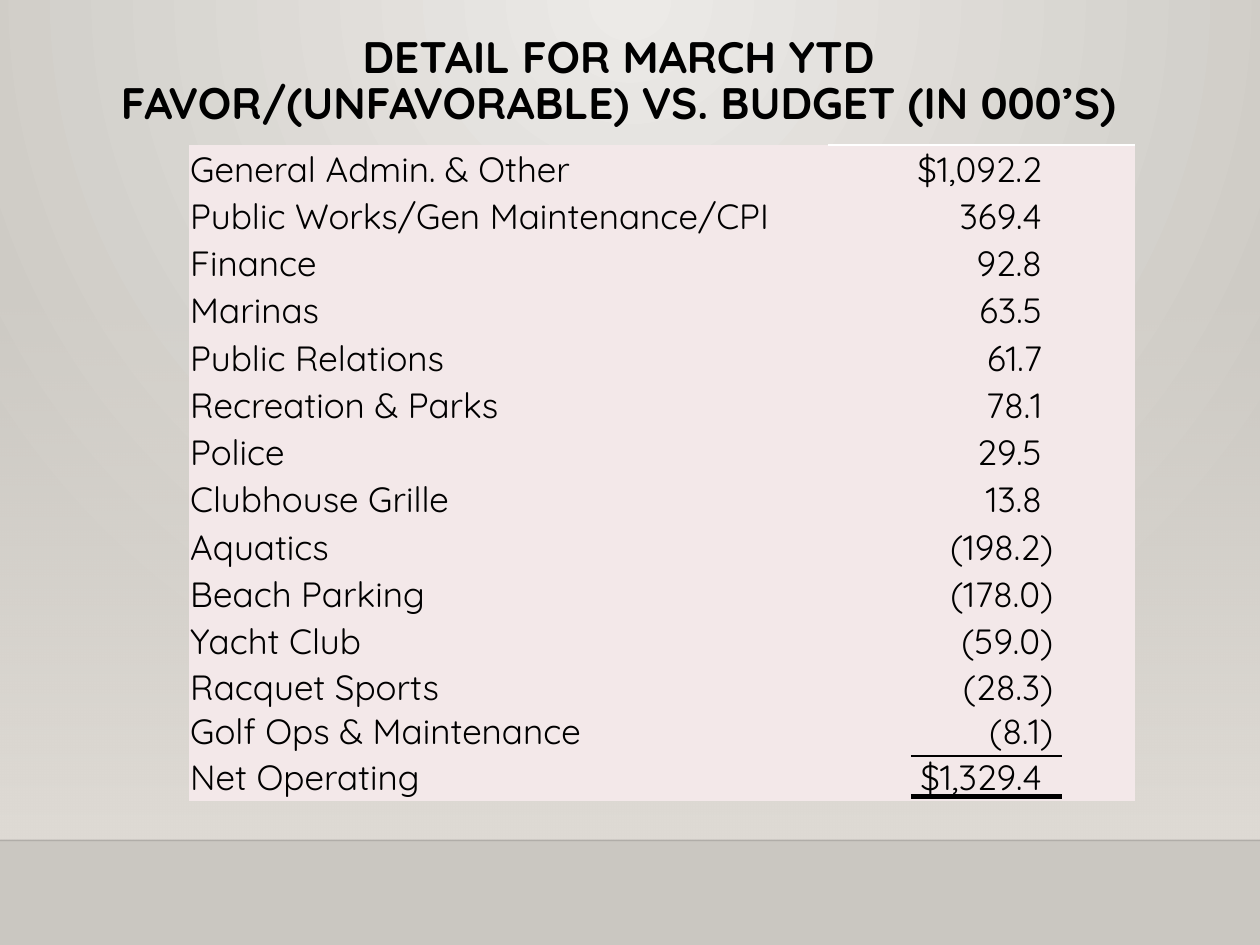
"""Build the March year-to-date budget variance slide."""
from lxml import etree
from pptx import Presentation
from pptx.dml.color import RGBColor
from pptx.enum.shapes import MSO_CONNECTOR, MSO_SHAPE
from pptx.enum.text import MSO_ANCHOR, MSO_AUTO_SIZE, PP_ALIGN
from pptx.oxml import parse_xml
from pptx.oxml.ns import nsdecls, qn
from pptx.util import Inches, Pt

STRAIGHT, RECTANGLE = MSO_CONNECTOR.STRAIGHT, MSO_SHAPE.RECTANGLE
TOP, MIDDLE = MSO_ANCHOR.TOP, MSO_ANCHOR.MIDDLE
LEFT, CENTER, RIGHT = PP_ALIGN.LEFT, PP_ALIGN.CENTER, PP_ALIGN.RIGHT
NO_AUTOFIT = MSO_AUTO_SIZE.NONE

TITLE = "DETAIL FOR MARCH YTD\vFAVOR/(UNFAVORABLE) VS. BUDGET (IN 000’S)"
DEPARTMENTS = [
    ("General Admin. & Other", "$1,092.2"),
    ("Public Works/Gen Maintenance/CPI", "369.4"),
    ("Finance", "92.8"),
    ("Marinas", "63.5"),
    ("Public Relations", "61.7"),
    ("Recreation & Parks", "78.1"),
    ("Police", "29.5"),
    ("Clubhouse Grille", "13.8"),
    ("Aquatics", "(198.2)"),
    ("Beach Parking", "(178.0)"),
    ("Yacht Club", "(59.0)"),
    ("Racquet Sports\nGolf Ops & Maintenance", "(28.3)\n(8.1)"),
    ("Net Operating", "$1,329.4"),
]
TOTAL_RULES = [(6.32, 3), (6, 1.25)]

THEME = {
    "font": "Quicksand", "title_size": 25.2, "body_size": 20,
    "ink": "000000", "cell": "F3E8E9", "border": "FFFFFF",
    "wall_light": "ECEAE7", "wall_dark": "CAC7C1", "floor": "DFDBD5",
}
WIDTH, HEIGHT = 10, 7.5
FLOOR_TOP, FLOOR_BOTTOM = 2.2, 6.67
TABLE_LEFT, TABLE_TOP = 1.5, 1.15
COLUMN_WIDTHS = (5.07, 2.44)
LINE_ROW, DOUBLE_ROW = Pt(27), Pt(51)
NO_GRID_STYLE = "{2D5ABB26-0587-4C30-8999-92F81FD0307C}"


def apply(target, formats):
    for name, value in formats.items():
        setattr(target, name, value)


def style_paragraph(paragraph, size, alignment, bold=False):
    paragraph.alignment = alignment
    for run in paragraph.runs:
        apply(run.font, {"name": THEME["font"], "size": Pt(size), "bold": bold})
        run.font.color.rgb = RGBColor.from_string(THEME["ink"])


def set_gradient(fill_parent, stops, direction):
    stop_xml = "".join(
        f'<a:gs pos="{position}"><a:srgbClr val="{color}">'
        f'<a:alpha val="{alpha}"/></a:srgbClr></a:gs>'
        for position, color, alpha in stops)
    gradient = parse_xml(
        f'<a:gradFill {nsdecls("a")} rotWithShape="1">'
        f"<a:gsLst>{stop_xml}</a:gsLst>{direction}</a:gradFill>")
    solid = fill_parent.find(qn("a:solidFill"))
    fill_parent.replace(solid, gradient)


def add_rule(slide, left, right, y, weight, alpha=None):
    rule = slide.shapes.add_connector(
        STRAIGHT, Inches(left), Inches(y), Inches(right), Inches(y))
    rule.line.width = Pt(weight)
    rule.line.color.rgb = RGBColor.from_string(THEME["ink"])
    properties = rule._element.spPr
    if alpha is not None:
        color = properties.find(".//" + qn("a:srgbClr"))
        etree.SubElement(color, qn("a:alpha"), val=str(alpha))
    etree.SubElement(properties, qn("a:effectLst"))


def add_backdrop(slide):
    slide.background.fill.solid()
    set_gradient(
        slide._element.cSld.find(".//" + qn("p:bgPr")),
        [(0, THEME["wall_light"], 100000), (100000, THEME["wall_dark"], 100000)],
        '<a:path path="circle"><a:fillToRect l="43000" t="0" r="43000" b="100000"/></a:path>')
    floor = slide.shapes.add_shape(
        RECTANGLE, 0, Inches(FLOOR_TOP), Inches(WIDTH), Inches(FLOOR_BOTTOM - FLOOR_TOP))
    floor.shadow.inherit = False
    floor.line.fill.background()
    floor.fill.solid()
    set_gradient(
        floor._element.spPr,
        [(0, THEME["floor"], 0), (100000, THEME["floor"], 100000)],
        '<a:lin ang="5400000" scaled="0"/>')
    add_rule(slide, 0, WIDTH, FLOOR_BOTTOM, 1, alpha=20000)


def add_title(slide):
    title = slide.shapes.title
    apply(title, {"left": Inches(0.81), "top": Inches(0.23),
                  "width": Inches(8.2), "height": Inches(1.34)})
    title.text_frame.text = TITLE
    apply(title.text_frame, {"word_wrap": True, "vertical_anchor": TOP,
                             "margin_top": Inches(0.06), "auto_size": NO_AUTOFIT})
    heading = title.text_frame.paragraphs[0]
    heading.line_spacing = 0.87
    style_paragraph(heading, THEME["title_size"], CENTER, bold=True)


def fill_cell(cell, text, alignment, right_margin):
    cell.text = text
    apply(cell, {"vertical_anchor": MIDDLE, "margin_left": Inches(0.01),
                 "margin_top": Inches(0.01), "margin_bottom": 0,
                 "margin_right": Inches(right_margin)})
    cell.fill.solid()
    cell.fill.fore_color.rgb = RGBColor.from_string(THEME["cell"])
    for paragraph in cell.text_frame.paragraphs:
        style_paragraph(paragraph, THEME["body_size"], alignment)


def add_budget_table(slide):
    heights = [DOUBLE_ROW if "\n" in name else LINE_ROW for name, _ in DEPARTMENTS]
    table = slide.shapes.add_table(
        len(DEPARTMENTS), len(COLUMN_WIDTHS), Inches(TABLE_LEFT), Inches(TABLE_TOP),
        Inches(sum(COLUMN_WIDTHS)), sum(heights)).table
    apply(table, {"first_row": False, "horz_banding": False})
    table._tbl.tblPr.find(qn("a:tableStyleId")).text = NO_GRID_STYLE
    for column, width in zip(table.columns, COLUMN_WIDTHS):
        column.width = Inches(width)
    for index, (name, amount) in enumerate(DEPARTMENTS):
        table.rows[index].height = heights[index]
        fill_cell(table.cell(index, 0), name, LEFT, 0.01)
        fill_cell(table.cell(index, 1), amount, RIGHT, 0.65 if "(" in amount else 0.74)
    top_border = parse_xml(
        f'<a:lnT {nsdecls("a")} w="12700"><a:solidFill>'
        f'<a:srgbClr val="{THEME["border"]}"/></a:solidFill></a:lnT>')
    table.cell(0, 1)._tc.tcPr.insert(0, top_border)


def main():
    deck = Presentation()
    apply(deck, {"slide_width": Inches(WIDTH), "slide_height": Inches(HEIGHT)})
    slide = deck.slides.add_slide(deck.slide_layouts[5])
    add_backdrop(slide)
    add_title(slide)
    add_budget_table(slide)
    for y, weight in TOTAL_RULES:
        add_rule(slide, 7.23, 8.43, y, weight)
    deck.save("out.pptx")


if __name__ == "__main__":
    main()
